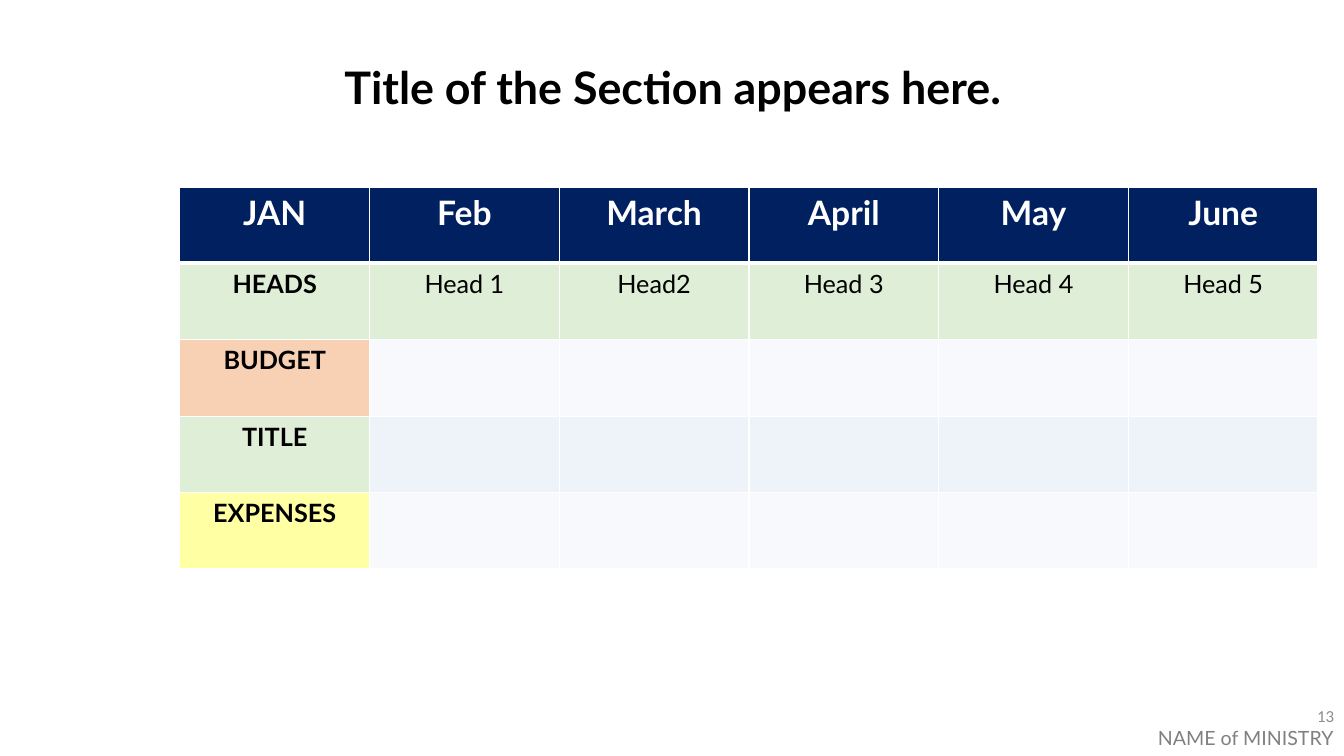
import pptx
import pptx.util
import pptx.dml.color
import pptx.enum.text
from lxml import etree
from pptx.oxml.ns import qn

Pt = pptx.util.Pt
Align = pptx.enum.text.PP_ALIGN
Anchor = pptx.enum.text.MSO_ANCHOR

theme = {
    "font": "Lato", "number_font": "Calibri",
    "black": "000000", "white": "FFFFFF", "navy": "002060",
    "green": "A9D18E", "orange": "ED7D31", "yellow": "FFFF00",
    "pale": "EAEFF7", "blue": "D2DEEF",
    "footer": "808080", "number": "8C8C8C",
    "title_size": 32, "header_size": 24, "body_size": 18,
    "footer_size": 14, "number_size": 12, "opacity": 36000,
}


def write(frame, text, size, color, bold=False, align=Align.LEFT, font=theme["font"]):
    para = frame.paragraphs[0]
    para.text = text
    para.alignment = align
    para.font.name = font
    para.font.size = Pt(size)
    para.font.bold = bold
    para.font.color.rgb = pptx.dml.color.RGBColor.from_string(color)
    return para


def style_cell(cell, color, widths, opacity=None):
    properties = cell._tc.get_or_add_tcPr()
    for side, width in widths.items():
        line = etree.SubElement(properties, qn(f"a:ln{side}"), w=str(Pt(width)))
        paint = etree.SubElement(line, qn("a:solidFill"))
        etree.SubElement(paint, qn("a:srgbClr"), val=theme["white"])
    cell.fill.solid()
    cell.fill.fore_color.rgb = pptx.dml.color.RGBColor.from_string(color)
    if opacity:
        tone = properties.find(qn("a:solidFill")).find(qn("a:srgbClr"))
        etree.SubElement(tone, qn("a:alpha"), val=str(opacity))


deck = pptx.Presentation()
deck.slide_width, deck.slide_height = Pt(960), Pt(540)
page = deck.slides.add_slide(deck.slide_layouts[6])

footer = page.shapes.add_textbox(Pt(820), Pt(514.8), Pt(208.8), Pt(24.5))
footer.text_frame.word_wrap = True
write(footer.text_frame, "NAME of MINISTRY", theme["footer_size"], theme["footer"])

rows = [
    (["JAN", "Feb", "March", "April", "May", "June"], "navy", "navy"),
    (["HEADS", "Head 1", "Head2", "Head 3", "Head 4", "Head 5"], "green", "green"),
    (["BUDGET"], "orange", "pale"),
    (["TITLE"], "green", "blue"),
    (["EXPENSES"], "yellow", "pale"),
]
column_count = len(rows[0][0])
table = page.shapes.add_table(len(rows), column_count, Pt(128.5), Pt(133.5), Pt(813), Pt(273)).table
for column in table.columns:
    column.width = Pt(135.5)
for row in table.rows:
    row.height = Pt(54.6)

for row_index, (labels, first_color, other_color) in enumerate(rows):
    header = row_index == 0
    widths = {"L": 1, "R": 1, "T": 3 if row_index == 1 else 1, "B": 3 if header else 1}
    for column_index in range(column_count):
        cell = table.cell(row_index, column_index)
        color = theme[first_color if column_index == 0 else other_color]
        style_cell(cell, color, widths, None if header else theme["opacity"])
        if column_index < len(labels):
            write(cell.text_frame, labels[column_index],
                  theme["header_size" if header else "body_size"],
                  theme["white" if header else "black"],
                  header or column_index == 0, Align.CENTER)

number = page.shapes.add_textbox(Pt(744), Pt(496.8), Pt(216), Pt(28.8))
number.text_frame.word_wrap = True
number.text_frame.vertical_anchor = Anchor.MIDDLE
write(number.text_frame, "13", theme["number_size"], theme["number"],
      align=Align.RIGHT, font=theme["number_font"])

title = page.shapes.add_textbox(Pt(236), Pt(43.2), Pt(489.6), Pt(42.5))
title.text_frame.word_wrap = True
heading = write(title.text_frame, "Title of the Section appears here.",
                theme["title_size"], theme["black"], True, Align.CENTER)
heading.line_spacing = 0.9

deck.save("out.pptx")
